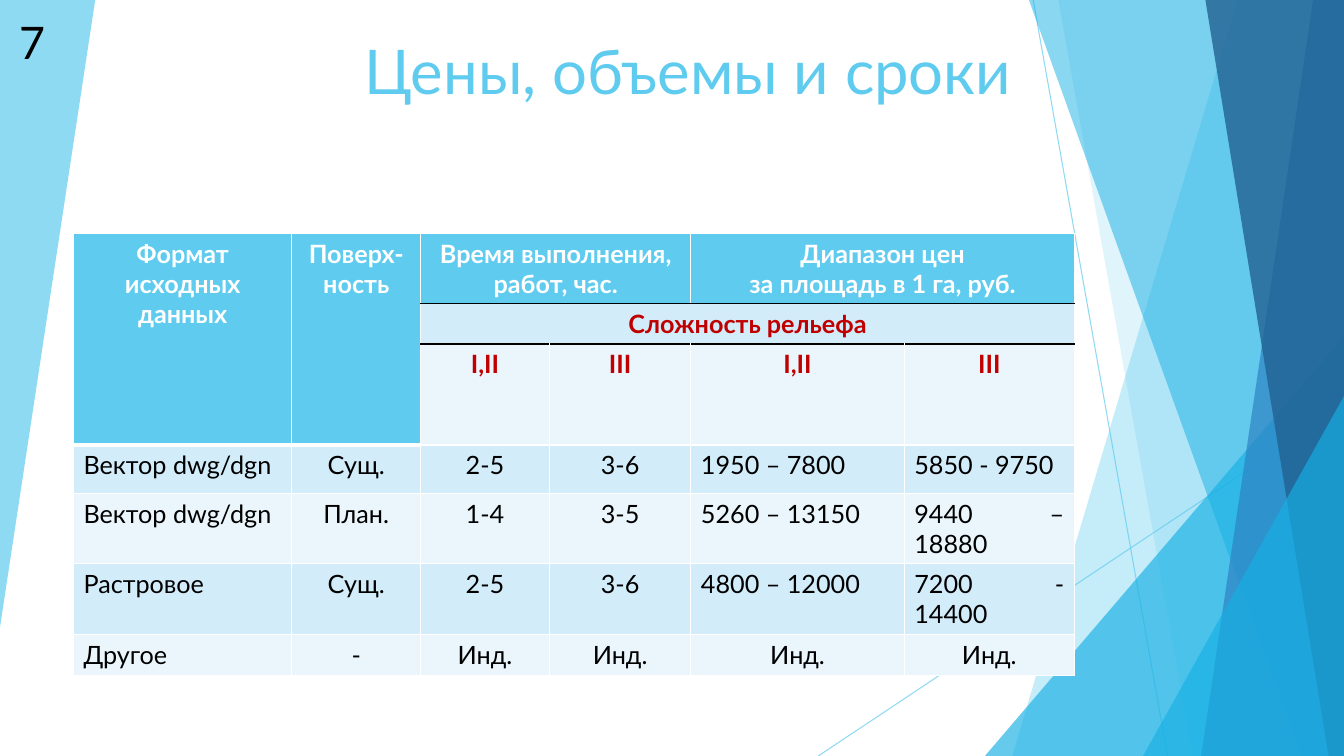
from lxml import etree
from pptx import Presentation
from pptx.dml.color import RGBColor
from pptx.enum import shapes, text
from pptx.oxml import ns
from pptx.util import Pt

FONT = "Lato"
SKY, CYAN, RED = "5FCBEF", "17B0E4", "C00000"
BAND, PALE, WHITE, BLACK = "D2ECF9", "EAF6FC", "FFFFFF", "000000"
CENTER, LEFT = text.PP_ALIGN.CENTER, text.PP_ALIGN.LEFT
RIGHT, JUSTIFY = text.PP_ALIGN.RIGHT, text.PP_ALIGN.JUSTIFY


def paint(fill, color, opacity=100):
    """Fill solidly; opacity is in percent."""
    fill.solid()
    fill.fore_color.rgb = RGBColor.from_string(color)
    if opacity < 100:
        for color_element in fill._xPr.iter(ns.qn("a:srgbClr")):
            etree.SubElement(color_element, ns.qn("a:alpha"), val=str(opacity * 1000))


def write(frame, content, size, color, align, bold=False):
    """Write one paragraph for each line of content."""
    for index, line in enumerate(content.split("\n")):
        paragraph = frame.add_paragraph() if index else frame.paragraphs[0]
        paragraph.alignment = align
        run = paragraph.add_run()
        run.text = line
        run.font.name, run.font.size, run.font.bold = FONT, Pt(size), bold
        run.font.color.rgb = RGBColor.from_string(color)


presentation = Presentation()
presentation.slide_width, presentation.slide_height = Pt(960), Pt(540)
slide = presentation.slides.add_slide(presentation.slide_layouts[5])

# Background facets, from back to front
right_edge = [(960, 0), (960, 540)]
facets = [
    ("polygon", [(0, 0), (68, 0), (0, 448)], SKY, 70),
    ("line", [(738, 0), (834, 540)], SKY, 70),
    ("line", [(960, 290), (584.5, 540)], SKY, 70),
    ("polygon", [(884, 0), *right_edge, (723, 540)], SKY, 36),
    ("polygon", [(756, 0), *right_edge, (852, 540)], SKY, 20),
    ("triangle", [(703.5, 240), (960, 540)], CYAN, 66),
    ("polygon", [(735, 0), *right_edge, (929.5, 540)], CYAN, 50),
    ("polygon", [(938, 0), *right_edge, (858, 540)], "2E83C3", 70),
    ("polygon", [(861, 0), *right_edge, (949, 540)], "226292", 80),
    ("triangle", [(816.5, 283), (960, 540)], CYAN, 66),
]
for kind, points, color, opacity in facets:
    points = [(Pt(x), Pt(y)) for x, y in points]
    (left, top), (right, bottom) = points[0], points[1]
    if kind == "line":
        line = slide.shapes.add_connector(shapes.MSO_CONNECTOR.STRAIGHT, left, top, right, bottom)
        line.line.width = Pt(0.75)
        paint(line.line.fill, color, opacity)
        etree.SubElement(line._element.spPr, ns.qn("a:effectLst"))
        continue
    if kind == "polygon":
        builder = slide.shapes.build_freeform(left, top)
        builder.add_line_segments(points[1:])
        facet = builder.convert_to_shape()
    else:
        facet = slide.shapes.add_shape(
            shapes.MSO_SHAPE.ISOSCELES_TRIANGLE, left, top, right - left, bottom - top)
        facet.adjustments[0] = 1
    facet.shadow.inherit = False
    facet.line.fill.background()
    paint(facet.fill, color, opacity)

# Title, in front of the facets
title = slide.shapes.title
title.element.getparent().append(title.element)
title.left, title.top, title.width, title.height = Pt(119), Pt(30), Pt(611), Pt(50)
title.text_frame.auto_size = text.MSO_AUTO_SIZE.NONE
title.text_frame.vertical_anchor = text.MSO_ANCHOR.BOTTOM
write(title.text_frame, "Цены, объемы и сроки", 44, SKY, RIGHT)

# Price table
column_widths = [156, 92, 92, 101, 152.5, 121.5]
row_heights = [50, 28.5, 72, 34.5, 50, 50.5, 29.5]
rows = [
    ["Формат исходных данных", "Поверх-ность", "Время выполнения,\nработ, час.", "",
     "Диапазон цен\nза площадь в 1 га, руб.", ""],
    ["", "", "Сложность рельефа", "", "", ""],
    ["", "", "I,II", "III", "I,II", "III"],
    ["Вектор dwg/dgn", "Сущ.", "2-5", "3-6", "1950 – 7800", "5850 - 9750"],
    ["Вектор dwg/dgn", "План.", "1-4", "3-5", "5260 – 13150", "9440 – 18880"],
    ["Растровое", "Сущ.", "2-5", "3-6", "4800 – 12000", "7200 - 14400"],
    ["Другое", "-", "Инд.", "Инд.", "Инд.", "Инд."],
]
table = slide.shapes.add_table(
    len(rows), len(column_widths), Pt(52.5), Pt(166.5),
    Pt(sum(column_widths)), Pt(sum(row_heights))).table
table.first_row = table.horz_banding = False
for column, width in zip(table.columns, column_widths):
    column.width = Pt(width)
for row, height in zip(table.rows, row_heights):
    row.height = Pt(height)

for first, last in [((0, 0), (2, 0)), ((0, 1), (2, 1)), ((0, 2), (0, 3)),
                    ((0, 4), (0, 5)), ((1, 2), (1, 5))]:
    table.cell(*first).merge(table.cell(*last))

for r, row in enumerate(rows):
    for c, content in enumerate(row):
        cell = table.cell(r, c)
        header = r == 0 or (r < 3 and c < 2)
        borders = dict.fromkeys(["lnL", "lnR", "lnT", "lnB"], (WHITE, 1))
        if r < 3 and c < 2:
            borders["lnB"] = (WHITE, 3)
        elif r < 3:
            if r > 0:
                borders["lnT"] = (BLACK, 1)
            if r < 2:
                borders["lnB"] = (BLACK, 1)
        for side, (color, width) in borders.items():
            border = etree.SubElement(
                cell._tc.get_or_add_tcPr(), ns.qn(f"a:{side}"), w=str(Pt(width)))
            solid = etree.SubElement(border, ns.qn("a:solidFill"))
            etree.SubElement(solid, ns.qn("a:srgbClr"), val=color)
        paint(cell.fill, SKY if header else BAND if r % 2 else PALE)
        if content:
            align = CENTER
            if r > 2 and c == 0:
                align = LEFT
            elif 2 < r < 6 and c > 3:
                align = JUSTIFY
            color = WHITE if header else RED if r < 3 else BLACK
            write(cell.text_frame, content, 18, color, align, bold=r < 3)

# Slide number
number = slide.shapes.add_textbox(Pt(6.5), Pt(7), Pt(34.5), Pt(46))
number.text_frame.word_wrap = True
write(number.text_frame, "7", 32, BLACK, LEFT)

presentation.save("out.pptx")
